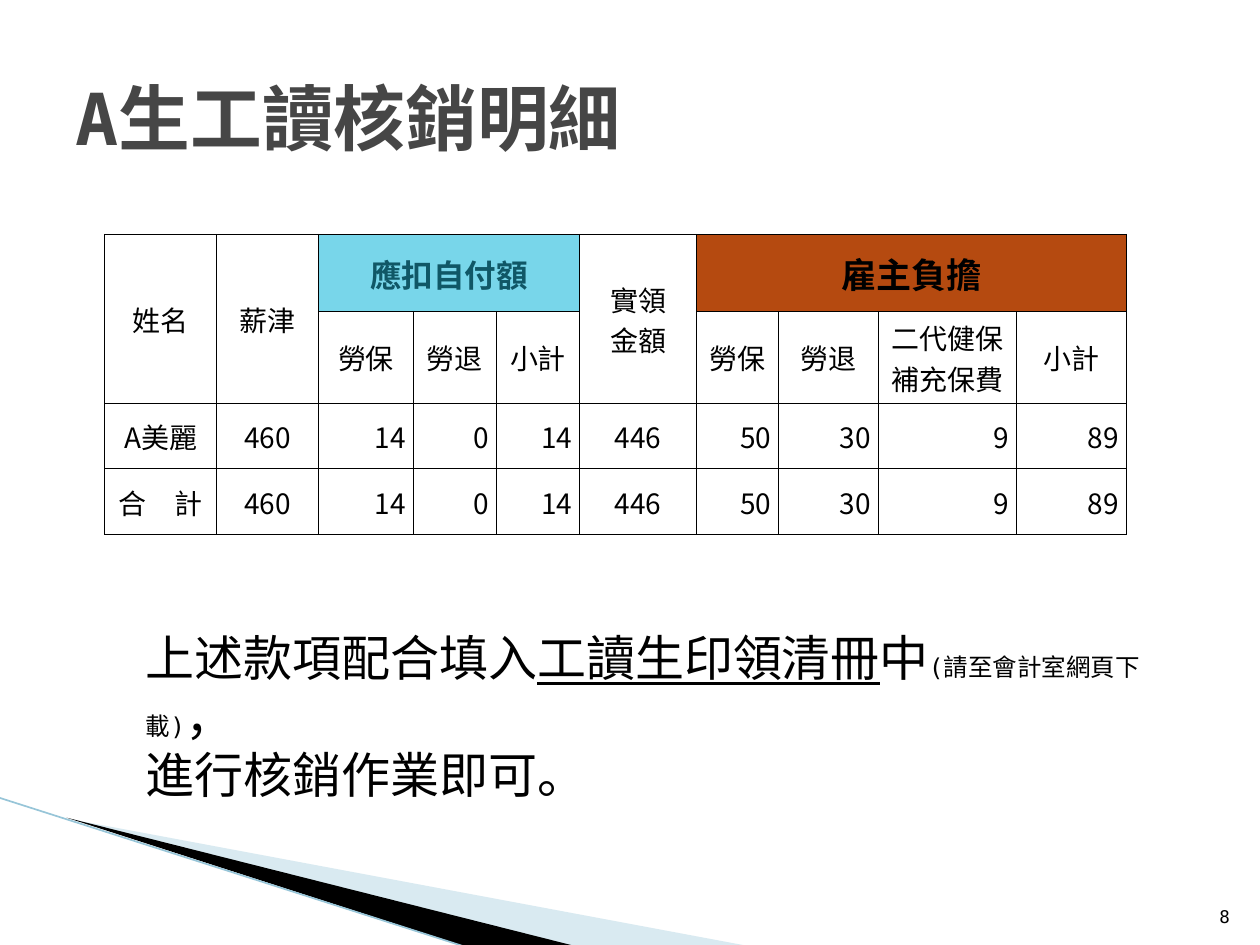
"""Build the slide listing the settlement details of a student worker."""
from lxml import etree
from pptx import Presentation
from pptx.dml.color import RGBColor
from pptx.enum.shapes import MSO_CONNECTOR
from pptx.enum.text import MSO_ANCHOR, PP_ALIGN
from pptx.oxml.ns import qn
from pptx.util import Inches, Pt

LEFT, CENTER, RIGHT = PP_ALIGN.LEFT, PP_ALIGN.CENTER, PP_ALIGN.RIGHT
TOP, MIDDLE, BOTTOM = MSO_ANCHOR.TOP, MSO_ANCHOR.MIDDLE, MSO_ANCHOR.BOTTOM
STRAIGHT = MSO_CONNECTOR.STRAIGHT

COLORS = {
    "text": "000000", "title": "464646", "deduction_text": "105766",
    "deduction": "78D6EA", "employer": "B54A10", "cell": "FFFFFF",
    "pale_wedge": "A0CBDC", "dark_wedge": "000000", "edge": "97C5D8",
}
MONO, CJK = "DejaVu Sans Mono", "Noto Sans CJK TC"

TITLE = "A生工讀核銷明細"
PAGE_NUMBER = "8"
NOTE = [
    [("上述款項配合填入", {}), ("工讀生印領清冊", {"underline": True}), ("中", {}),
     ("(請至會計室網頁下載)", {"size": 14}), ("，", {})],
    "進行核銷作業即可。",
]

AMOUNTS = ["460", "14", "0", "14", "446", "50", "30", "9", "89"]
ROWS = [
    ["姓名", "薪津", "應扣自付額", "", "", "實領\n金額", "雇主負擔", "", "", ""],
    ["", "", "勞保", "勞退", "小計", "", "勞保", "勞退", "二代健保\n補充保費", "小計"],
    ["A美麗", *AMOUNTS],
    ["合\u3000計".replace("\u3000", "　"), *AMOUNTS],
]
COLUMN_WIDTHS = [0.89, 0.81, 0.75, 0.66, 0.66, 0.93, 0.65, 0.79, 1.1, 0.87]
ROW_HEIGHTS = [0.61, 0.73, 0.52, 0.52]
MERGES = [((0, 0), (1, 0)), ((0, 1), (1, 1)), ((0, 2), (0, 4)),
          ((0, 5), (1, 5)), ((0, 6), (0, 9))]
GROUP_HEADS = {
    (0, 2): ("deduction", {"size": 18, "bold": True, "color": "deduction_text"}),
    (0, 6): ("employer", {"size": 20, "bold": True}),
}
HEADER_ROWS = 2
CENTERED_COLUMNS = {0, 1, 5}

WEDGES = [
    ("pale_wedge", 40, [(0.55, 6.5), (5.95, 7.51), (4.56, 7.51)]),
    ("dark_wedge", 100, [(0.53, 6.49), (4.57, 7.51), (3.72, 7.52)]),
]
EDGE = (-0.01, 6.33, 3.71, 7.52)


def rgb(name):
    return RGBColor.from_string(COLORS[name])


def write(frame, paragraphs, size=16, font=MONO, color="text", bold=False,
          align=LEFT, anchor=TOP):
    frame.word_wrap = True
    frame.vertical_anchor = anchor
    for index, content in enumerate(paragraphs):
        paragraph = frame.paragraphs[0] if index == 0 else frame.add_paragraph()
        paragraph.alignment = align
        for text, style in [(content, {})] if isinstance(content, str) else content:
            run = paragraph.add_run()
            run.text = text
            run.font.size = Pt(style.get("size", size))
            run.font.name = font
            run.font.bold = bold
            run.font.underline = style.get("underline", False)
            run.font.color.rgb = rgb(color)
            east_asian = etree.Element(qn("a:ea"), typeface=CJK)
            run.font._element.find(qn("a:latin")).addnext(east_asian)


def add_text(slide, box, paragraphs, **style):
    frame = slide.shapes.add_textbox(*map(Inches, box)).text_frame
    write(frame, paragraphs, **style)


def add_wedge(slide, color, opacity, points):
    start, *others = [tuple(map(Inches, point)) for point in points]
    builder = slide.shapes.build_freeform(*start)
    builder.add_line_segments(others, close=True)
    wedge = builder.convert_to_shape()
    wedge.shadow.inherit = False
    wedge.line.fill.background()
    wedge.fill.solid()
    wedge.fill.fore_color.rgb = rgb(color)
    if opacity < 100:
        tint = wedge._element.spPr.find(qn("a:solidFill"))[0]
        etree.SubElement(tint, qn("a:alpha"), val=str(opacity * 1000))


def add_edge(slide):
    edge = slide.shapes.add_connector(STRAIGHT, *map(Inches, EDGE))
    edge.line.color.rgb = rgb("edge")
    edge.line.width = Pt(0.95)
    etree.SubElement(edge._element.spPr, qn("a:effectLst"))


def add_borders(cell):
    properties = cell._tc.get_or_add_tcPr()
    for side in ("lnL", "lnR", "lnT", "lnB"):
        border = etree.SubElement(properties, qn(f"a:{side}"), w=str(Pt(0.5)))
        fill = etree.SubElement(border, qn("a:solidFill"))
        etree.SubElement(fill, qn("a:srgbClr"), val=COLORS["text"])


def add_details(slide):
    table = slide.shapes.add_table(
        len(ROWS), len(COLUMN_WIDTHS), Inches(0.83), Inches(1.86),
        Inches(sum(COLUMN_WIDTHS)), Inches(sum(ROW_HEIGHTS))).table
    table.first_row = table.horz_banding = False
    for column, width in zip(table.columns, COLUMN_WIDTHS):
        column.width = Inches(width)
    for row, height in zip(table.rows, ROW_HEIGHTS):
        row.height = Inches(height)
    for first, last in MERGES:
        table.cell(*first).merge(table.cell(*last))
    for r, values in enumerate(ROWS):
        for c, value in enumerate(values):
            cell = table.cell(r, c)
            centered = r < HEADER_ROWS or c in CENTERED_COLUMNS
            fill, style = GROUP_HEADS.get((r, c), ("cell", {}))
            add_borders(cell)
            cell.fill.solid()
            cell.fill.fore_color.rgb = rgb(fill)
            cell.margin_left = cell.margin_top = Inches(0.01)
            cell.margin_right = Inches(0.01 if centered else 0.06)
            cell.margin_bottom = 0
            cell.vertical_anchor = MIDDLE
            if value:
                write(cell.text_frame, value.split("\n"), font=CJK, anchor=None,
                      align=CENTER if centered else RIGHT, **style)


def main():
    presentation = Presentation()
    presentation.slide_width, presentation.slide_height = Inches(10), Inches(7.5)
    slide = presentation.slides.add_slide(presentation.slide_layouts[6])
    for wedge in WEDGES:
        add_wedge(slide, *wedge)
    add_edge(slide)
    add_details(slide)
    add_text(slide, (0.5, 0.3, 9, 1.25), [TITLE], size=41, color="title",
             bold=True, anchor=MIDDLE)
    add_text(slide, (1.06, 4.93, 8.77, 1.04), NOTE, size=28)
    add_text(slide, (9.46, 7.01, 0.4, 0.4), [PAGE_NUMBER], size=10,
             align=RIGHT, anchor=BOTTOM)
    presentation.save("out.pptx")


if __name__ == "__main__":
    main()
